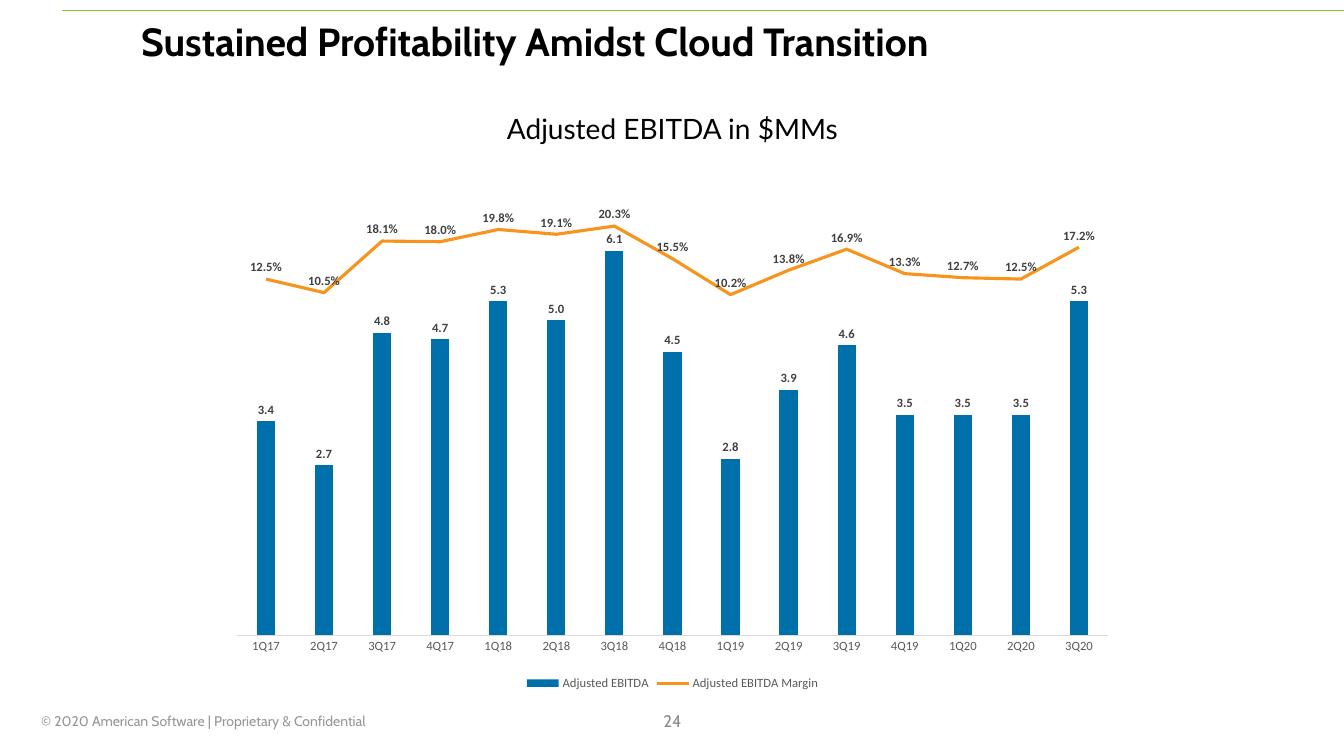
"""Build the adjusted EBITDA slide with its column and line chart."""
from dataclasses import dataclass

from lxml.etree import SubElement
from pptx import Presentation
from pptx.chart.data import CategoryChartData as Data
from pptx.dml.color import RGBColor as Rgb
from pptx.enum.chart import XL_CHART_TYPE as Kind
from pptx.enum.chart import XL_LABEL_POSITION as Pos
from pptx.enum.chart import XL_LEGEND_POSITION as Side
from pptx.enum.chart import XL_MARKER_STYLE as Mark
from pptx.enum.chart import XL_TICK_LABEL_POSITION as Tick
from pptx.enum.chart import XL_TICK_MARK as Tmark
from pptx.enum.shapes import MSO_CONNECTOR as Conn
from pptx.enum.text import MSO_ANCHOR as Anchor
from pptx.enum.text import MSO_AUTO_SIZE as Fit
from pptx.enum.text import PP_ALIGN as Align
from pptx.oxml import parse_xml
from pptx.oxml.ns import nsdecls, qn
from pptx.util import Inches, Pt

COLORS = {
    "black": "000000", "green": "8CC63F", "blue": "0070AB", "orange": "F7941D",
    "foot": "969696", "page": "8C8C8C", "axis": "595959", "label": "404040",
    "rule": "D9D9D9",
}


@dataclass
class Label:
    """A text on the slide, with its box and style."""
    text: str
    box: tuple[float, float, float, float]
    size: float
    font: str
    color: str
    align: Align = Align.LEFT
    anchor: Anchor = Anchor.TOP
    bold: bool = False


@dataclass
class Row:
    """A chart series with its label style."""
    name: str
    vals: list[float]
    fmt: str
    pos: Pos


TITLE = Label("Sustained Profitability Amidst Cloud Transition", (1.3, 0.11, 11.57, 0.64),
              28, "Cabin", "black", anchor=Anchor.MIDDLE, bold=True)
LABELS = [
    Label("© 2020 American Software | Proprietary & Confidential",
          (0.31, 7.02, 3.75, 0.27), 10, "Cabin", "foot"),
    Label("Adjusted EBITDA in $MMs", (3.44, 1.06, 6.46, 0.44), 20, "Lato", "black", Align.CENTER),
    Label("24", (5.17, 6.95, 3, 0.4), 12, "Cabin", "page", Align.CENTER, Anchor.MIDDLE),
]
CATS = [f"{q}Q{y}" for y in range(17, 21) for q in range(1, 5)][:15]
ROWS = [
    Row("Adjusted EBITDA",
        [3.4, 2.7, 4.8, 4.7, 5.3, 5, 6.1, 4.5, 2.8, 3.9, 4.6, 3.5, 3.5, 3.5, 5.3],
        "#,##0.0", Pos.OUTSIDE_END),
    Row("Adjusted EBITDA Margin",
        [0.125, 0.105, 0.181, 0.18, 0.198, 0.191, 0.203, 0.155, 0.102, 0.138,
         0.169, 0.133, 0.127, 0.125, 0.172],
        "0.0%", Pos.ABOVE),
]
LINE = f"""<c:lineChart {nsdecls('c')}><c:grouping val="standard"/><c:varyColors val="0"/>
<c:marker val="1"/><c:axId val="5001"/><c:axId val="5002"/></c:lineChart>"""
RIGHT = f"""<c:valAx {nsdecls('c', 'a')}><c:axId val="5002"/>
<c:scaling><c:orientation val="minMax"/><c:max val="0.25"/><c:min val="-0.4"/></c:scaling>
<c:delete val="0"/><c:axPos val="r"/><c:numFmt formatCode="0.0%" sourceLinked="0"/>
<c:majorTickMark val="none"/><c:minorTickMark val="none"/><c:tickLblPos val="none"/>
<c:spPr><a:ln><a:noFill/></a:ln></c:spPr><c:crossAx val="5001"/><c:crosses val="max"/></c:valAx>"""
BASE = f"""<c:catAx {nsdecls('c')}><c:axId val="5001"/>
<c:scaling><c:orientation val="minMax"/></c:scaling><c:delete val="1"/><c:axPos val="b"/>
<c:majorTickMark val="none"/><c:minorTickMark val="none"/><c:tickLblPos val="nextTo"/>
<c:crossAx val="5002"/><c:crosses val="autoZero"/></c:catAx>"""
PLOT = {"x": 0.02, "y": 0.025, "w": 0.96, "h": 0.86}


def ink(key: str) -> Rgb:
    """Return a named colour."""
    return Rgb.from_string(COLORS[key])


def style(font, size: float, name: str, key: str, bold: bool = False) -> None:
    """Set size, face, colour and weight of a font."""
    font.size, font.name, font.bold = Pt(size), name, bold
    font.color.rgb = ink(key)


def write(shape, item: Label) -> None:
    """Place a shape and fill it with its text."""
    shape.left, shape.top, shape.width, shape.height = map(Inches, item.box)
    frame = shape.text_frame
    frame.text = item.text
    frame.word_wrap = True
    frame.auto_size = Fit.NONE
    frame.vertical_anchor = item.anchor
    para = frame.paragraphs[0]
    para.alignment = item.align
    style(para.runs[0].font, item.size, item.font, item.color, item.bold)


def split(chart) -> None:
    """Move the second series to a line plot on a right axis and fix the plot area."""
    area = chart.plots[0]._element.getparent()
    bars = area.find(qn("c:barChart"))
    row = bars.findall(qn("c:ser"))[1]
    for flag in row.findall(qn("c:invertIfNegative")):
        row.remove(flag)
    line = parse_xml(LINE)
    line.insert(2, row)
    bars.addnext(line)
    left = area.find(qn("c:valAx"))
    right = parse_xml(RIGHT)
    left.addnext(right)
    right.addnext(parse_xml(BASE))
    for old in area.findall(qn("c:layout")):
        area.remove(old)
    lay = parse_xml(f"<c:layout {nsdecls('c')}/>")
    area.insert(0, lay)
    man = SubElement(lay, qn("c:manualLayout"))
    SubElement(man, qn("c:layoutTarget")).set("val", "inner")
    for key in "xy":
        SubElement(man, qn(f"c:{key}Mode")).set("val", "edge")
    for key, val in PLOT.items():
        SubElement(man, qn(f"c:{key}")).set("val", str(val))


def graph(slide) -> None:
    """Draw the chart."""
    data = Data()
    data.categories = CATS
    for row in ROWS:
        data.add_series(row.name, row.vals, row.fmt)
    box = map(Inches, (2.17, 1.8, 9, 5.09))
    chart = slide.shapes.add_chart(Kind.COLUMN_CLUSTERED, *box, data).chart
    style(chart.font, 10, "Calibri", "black")
    chart.has_title = False
    chart.has_legend = True
    chart.legend.position = Side.BOTTOM
    chart.legend.include_in_layout = False
    style(chart.legend.font, 9, "Calibri", "axis")
    cat, val = chart.category_axis, chart.value_axis
    for axis in (cat, val):
        axis.major_tick_mark = axis.minor_tick_mark = Tmark.NONE
        axis.has_major_gridlines = False
        style(axis.tick_labels.font, 9, "Calibri", "axis")
    cat.format.line.color.rgb = ink("rule")
    cat.format.line.width = Pt(0.75)
    val.minimum_scale, val.maximum_scale = 0, 7
    val.tick_label_position = Tick.NONE
    val.format.line.fill.background()
    split(chart)

    bars, line = chart.plots
    bars.gap_width, bars.overlap = 219, -27
    bars.vary_by_categories = False
    fill = bars.series[0].format.fill
    fill.solid()
    fill.fore_color.rgb = ink("blue")
    curve = line.series[0]
    curve.smooth = False
    curve.marker.style = Mark.NONE
    curve.format.line.color.rgb = ink("orange")
    curve.format.line.width = Pt(2.25)
    for row, plot in zip(ROWS, chart.plots):
        tags = plot.series[0].data_labels
        tags.show_value = True
        tags.number_format, tags.number_format_is_linked = row.fmt, False
        tags.position = row.pos
        style(tags.font, 9, "Calibri", "label", True)


def main() -> None:
    """Build and save the slide."""
    deck = Presentation()
    deck.slide_width, deck.slide_height = Inches(13.33), Inches(7.5)
    slide = deck.slides.add_slide(deck.slide_layouts[5])
    rule = slide.shapes.add_connector(Conn.STRAIGHT, *map(Inches, (0.62, 0.1, 13.33, 0.1)))
    rule.line.color.rgb = ink("green")
    rule.line.width = Pt(0.5)
    SubElement(rule._element.spPr, qn("a:effectLst"))
    write(slide.shapes.title, TITLE)
    slide.shapes.title.text_frame.paragraphs[0].line_spacing = 0.9
    graph(slide)
    for item in LABELS:
        write(slide.shapes.add_textbox(*map(Inches, item.box)), item)
    deck.save("out.pptx")


if __name__ == "__main__":
    main()
